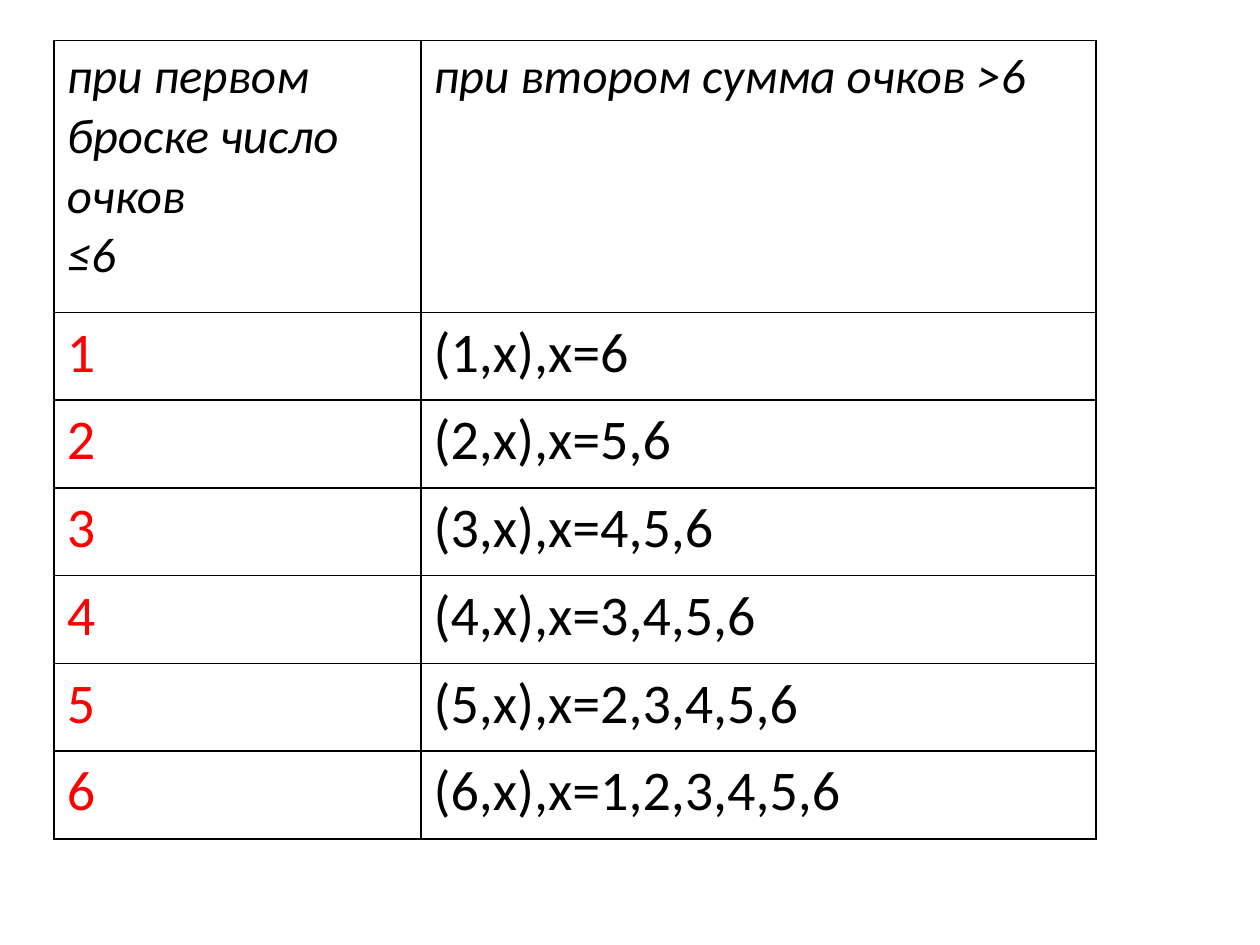
from lxml import etree
from pptx import Presentation
from pptx.dml.color import RGBColor
from pptx.oxml.ns import qn
from pptx.util import Inches, Pt

COLORS = {"text": "000000", "first_throw": "FF0000", "border": "000000"}
FONT = "Calibri"
BLANK_LAYOUT = 6
SIDES = ("a:lnL", "a:lnR", "a:lnT", "a:lnB")
FACES = 6

# Table box and grid, in inches
TABLE_BOX = (0.43, 0.32, 8.27, 6.34)
FIRST_COLUMN_SHARE = 0.352
HEADER_HEIGHT = 2.16

HEADERS = ("при первом\nброске число очков\n≤6", "при втором сумма очков >6")


def add_borders(cell, width=1):
    """Draw a solid line on each side of the cell."""
    properties = cell._tc.get_or_add_tcPr()
    for side in SIDES:
        line = etree.SubElement(properties, qn(side), w=str(Pt(width)))
        fill = etree.SubElement(line, qn("a:solidFill"))
        etree.SubElement(fill, qn("a:srgbClr"), val=COLORS["border"])


def write_cell(cell, text, size, color, italic=False):
    add_borders(cell)
    cell.fill.background()
    cell.text_frame.text = text
    for para in cell.text_frame.paragraphs:
        for span in para.runs:
            span.font.name = FONT
            span.font.size = Pt(size)
            span.font.italic = italic
            span.font.bold = False
            span.font.color.rgb = RGBColor.from_string(color)


def second_throws(first):
    """List the second throws that bring the sum above six."""
    values = ",".join(str(x) for x in range(FACES + 1 - first, FACES + 1))
    return f"({first},х),х={values}"


def add_throws_table(page, box):
    left, top, width, height = box
    frame = page.shapes.add_table(FACES + 1, 2, *map(Inches, box))
    table = frame.table
    table.first_row = False
    table.horz_banding = False

    # Grid
    table.columns[0].width = Inches(width * FIRST_COLUMN_SHARE)
    table.columns[1].width = Inches(width * (1 - FIRST_COLUMN_SHARE))
    table.rows[0].height = Inches(HEADER_HEIGHT)
    for first in range(1, FACES + 1):
        table.rows[first].height = Inches((height - HEADER_HEIGHT) / FACES)

    # Header row
    for column, header in enumerate(HEADERS):
        write_cell(table.cell(0, column), header, 28, COLORS["text"], italic=True)

    # One row for each first throw
    for first in range(1, FACES + 1):
        write_cell(table.cell(first, 0), str(first), 32, COLORS["first_throw"])
        write_cell(table.cell(first, 1), second_throws(first), 32, COLORS["text"])


def main():
    deck = Presentation()
    deck.slide_width = Inches(10)
    deck.slide_height = Inches(7.5)
    page = deck.slides.add_slide(deck.slide_layouts[BLANK_LAYOUT])
    add_throws_table(page, TABLE_BOX)
    deck.save("out.pptx")


if __name__ == "__main__":
    main()
